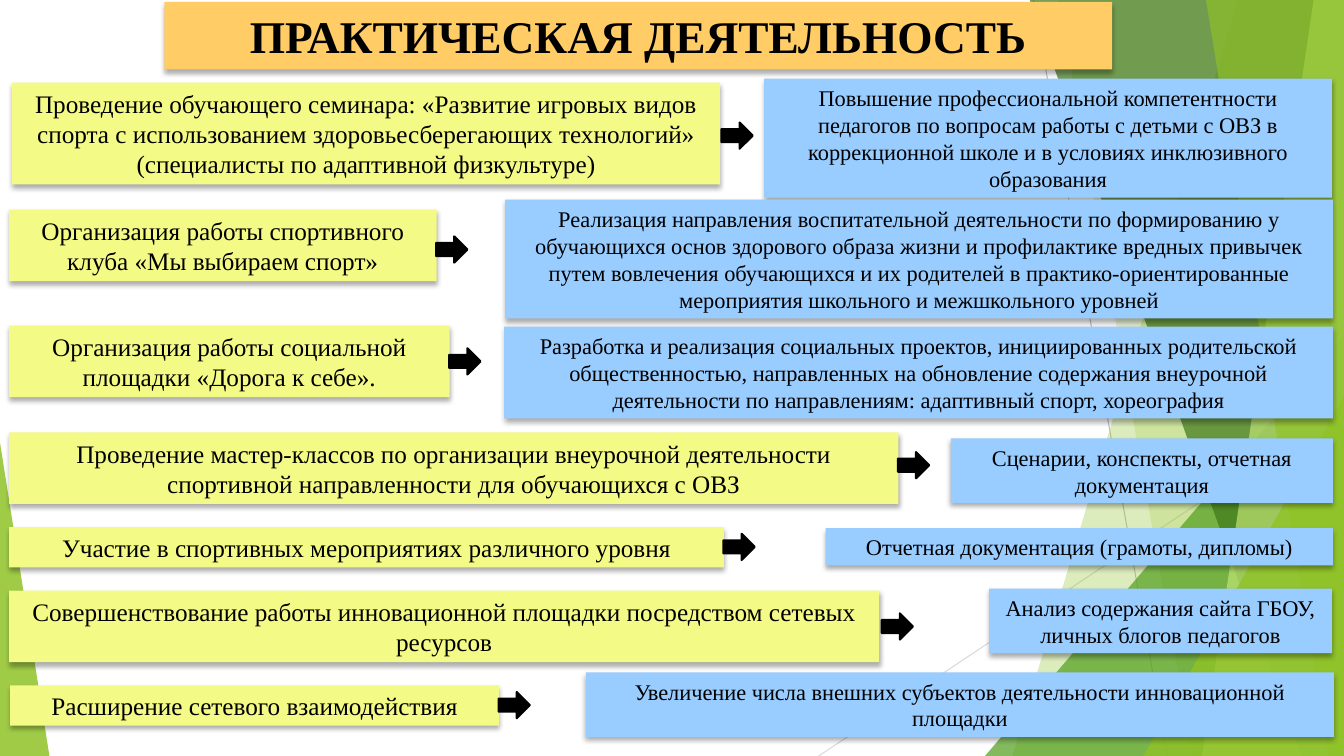
from lxml import etree
from pptx import Presentation
from pptx.dml.color import RGBColor
from pptx.enum.shapes import MSO_CONNECTOR, MSO_SHAPE
from pptx.enum.text import MSO_ANCHOR, PP_ALIGN
from pptx.oxml.ns import qn
from pptx.util import Inches, Pt

RECTANGLE = MSO_SHAPE.RECTANGLE
TRIANGLE = MSO_SHAPE.ISOSCELES_TRIANGLE
ARROW = MSO_SHAPE.DOWN_ARROW
STRAIGHT = MSO_CONNECTOR.STRAIGHT
CENTER = PP_ALIGN.CENTER
MIDDLE = MSO_ANCHOR.MIDDLE

FONT = "Times New Roman"
COLORS = {
    "title": "FFCC66", "activity": "F4FA86", "result": "99CCFF", "black": "000000",
    "green": "90C226", "mid_green": "54A021", "dark_green": "3F7819",
    "lime": "C0E474", "grey": "BFBFBF", "light_grey": "D9D9D9",
}
TOP, BOTTOM, RIGHT = -0.01, 7.5, 13.33

deck = Presentation()
deck.slide_width, deck.slide_height = Inches(RIGHT), Inches(BOTTOM)
page = deck.slides.add_slide(deck.slide_layouts[6])


def paint(shape, color, opacity=100):
    """Fill a shape without outline or shadow; opacity is in percent."""
    shape.shadow.inherit = False
    shape.line.fill.background()
    shape.fill.solid()
    shape.fill.fore_color.rgb = RGBColor.from_string(COLORS[color])
    if opacity < 100:
        tint = shape._element.spPr.find(qn("a:solidFill"))[0]
        etree.SubElement(tint, qn("a:alpha"), val=str(opacity * 1000))


def add_box(text, left, top, width, height, color, size, bold=False):
    """Add a filled rectangle with centred text and a soft shadow below it."""
    box = page.shapes.add_shape(
        RECTANGLE, Inches(left), Inches(top), Inches(width), Inches(height))
    paint(box, color)
    effects = box._element.spPr.find(qn("a:effectLst"))
    shadow = etree.SubElement(
        effects, qn("a:outerShdw"), blurRad=str(Pt(3.5)), dist=str(Pt(2.2)),
        dir="5400000", algn="t", rotWithShape="0")
    tint = etree.SubElement(shadow, qn("a:srgbClr"), val=COLORS["black"])
    etree.SubElement(tint, qn("a:alpha"), val="32000")
    frame = box.text_frame
    frame.word_wrap = True
    frame.vertical_anchor = MIDDLE
    para = frame.paragraphs[0]
    para.alignment = CENTER
    span = para.add_run()
    span.text = text
    span.font.name, span.font.size, span.font.bold = FONT, Pt(size), bold
    span.font.color.rgb = RGBColor.from_string(COLORS["black"])


# Backdrop: two thin lines under translucent green facets
for x1, y1, x2, y2, color in [
    (10.25, 0, 11.58, BOTTOM, "grey"),
    (RIGHT, 4.03, 8.12, BOTTOM, "light_grey"),
]:
    line = page.shapes.add_connector(
        STRAIGHT, Inches(x1), Inches(y1), Inches(x2), Inches(y2))
    line.line.color.rgb = RGBColor.from_string(COLORS[color])
    line.line.width = Pt(0.75)
    etree.SubElement(line._element.spPr, qn("a:effectLst"))

# A band gives its top and bottom left corners and runs to the right edge;
# a triangle gives left, top, width and the place of its apex.
facets = [
    ("band", (12.28, 10.04), "green", 30),
    ("band", (10.5, 11.83), "green", 20),
    ("triangle", (9.77, 3.33, 3.56, 1), "mid_green", 72),
    ("band", (10.21, 12.91), "dark_green", 70),
    ("band", (13.03, 11.92), "lime", 70),
    ("band", (11.96, 13.18), "green", 65),
    ("triangle", (11.34, 3.93, 1.99, 1), "green", 80),
    ("triangle", (0, 4.39, 0.49, 0), "green", 85),
]
for kind, place, color, opacity in facets:
    if kind == "band":
        top_x, bottom_x = place
        outline = page.shapes.build_freeform(Inches(top_x), Inches(TOP))
        corners = [(RIGHT, TOP), (RIGHT, BOTTOM), (bottom_x, BOTTOM)]
        outline.add_line_segments([(Inches(x), Inches(y)) for x, y in corners])
        facet = outline.convert_to_shape()
    else:
        left, top, width, apex = place
        facet = page.shapes.add_shape(
            TRIANGLE, Inches(left), Inches(top), Inches(width), Inches(BOTTOM - top))
        facet.adjustments[0] = apex
    paint(facet, color, opacity)

add_box("ПРАКТИЧЕСКАЯ ДЕЯТЕЛЬНОСТЬ", 1.63, 0.02, 9.4, 0.67, "title", 32.4, bold=True)

# Each row: activity and its place, arrow corner, result and its place
rows = [
    ("Проведение обучающего семинара: «Развитие игровых видов спорта с использованием "
     "здоровьесберегающих технологий» (специалисты по адаптивной физкультуре)",
     (0.12, 0.82, 7.02, 1.01), (7.18, 1.19),
     "Повышение профессиональной компетентности педагогов по вопросам работы с детьми "
     "с ОВЗ в коррекционной школе и в условиях инклюзивного образования",
     (7.58, 0.78, 5.63, 1.18)),
    ("Организация работы спортивного клуба «Мы выбираем спорт»",
     (0.09, 2.08, 4.24, 0.71), (4.35, 2.32),
     "Реализация направления воспитательной деятельности по формированию у обучающихся "
     "основ здорового образа жизни и профилактике вредных привычек путем вовлечения "
     "обучающихся и их родителей в практико-ориентированные мероприятия школьного и "
     "межшкольного уровней",
     (5.01, 1.98, 8.21, 1.18)),
    ("Организация работы социальной площадки «Дорога к себе».",
     (0.09, 3.23, 4.37, 0.71), (4.48, 3.43),
     "Разработка и реализация социальных проектов, инициированных родительской "
     "общественностью, направленных на обновление содержания внеурочной деятельности "
     "по направлениям: адаптивный спорт, хореография",
     (5, 3.24, 8.22, 0.91)),
    ("Проведение мастер-классов по организации внеурочной деятельности спортивной "
     "направленности для обучающихся с ОВЗ",
     (0.09, 4.29, 8.82, 0.71), (8.93, 4.46),
     "Сценарии, конспекты, отчетная документация",
     (9.43, 4.35, 3.79, 0.64)),
    ("Участие в спортивных мероприятиях различного уровня",
     (0.09, 5.23, 7.09, 0.4), (7.2, 5.27),
     "Отчетная документация (грамоты, дипломы)",
     (8.19, 5.24, 5.03, 0.37)),
    ("Совершенствование работы инновационной площадки посредством сетевых ресурсов",
     (0.09, 5.86, 8.63, 0.71), (8.77, 6.06),
     "Анализ содержания сайта ГБОУ, личных блогов педагогов",
     (9.81, 5.84, 3.4, 0.64)),
    ("Расширение сетевого взаимодействия",
     (0.1, 6.8, 4.85, 0.4), (4.97, 6.84),
     "Увеличение числа внешних субъектов деятельности инновационной площадки",
     (5.81, 6.67, 7.42, 0.64)),
]
for activity, activity_place, (arrow_x, arrow_y), result, result_place in rows:
    add_box(activity, *activity_place, "activity", 18)
    add_box(result, *result_place, "result", 16)
    arrow = page.shapes.add_shape(
        ARROW, Inches(arrow_x), Inches(arrow_y), Inches(0.26), Inches(0.31))
    arrow.rotation = 270
    paint(arrow, "black")
    arrow.line.color.rgb = RGBColor.from_string(COLORS["black"])
    arrow.line.width = Pt(1.5)

deck.save("out.pptx")
